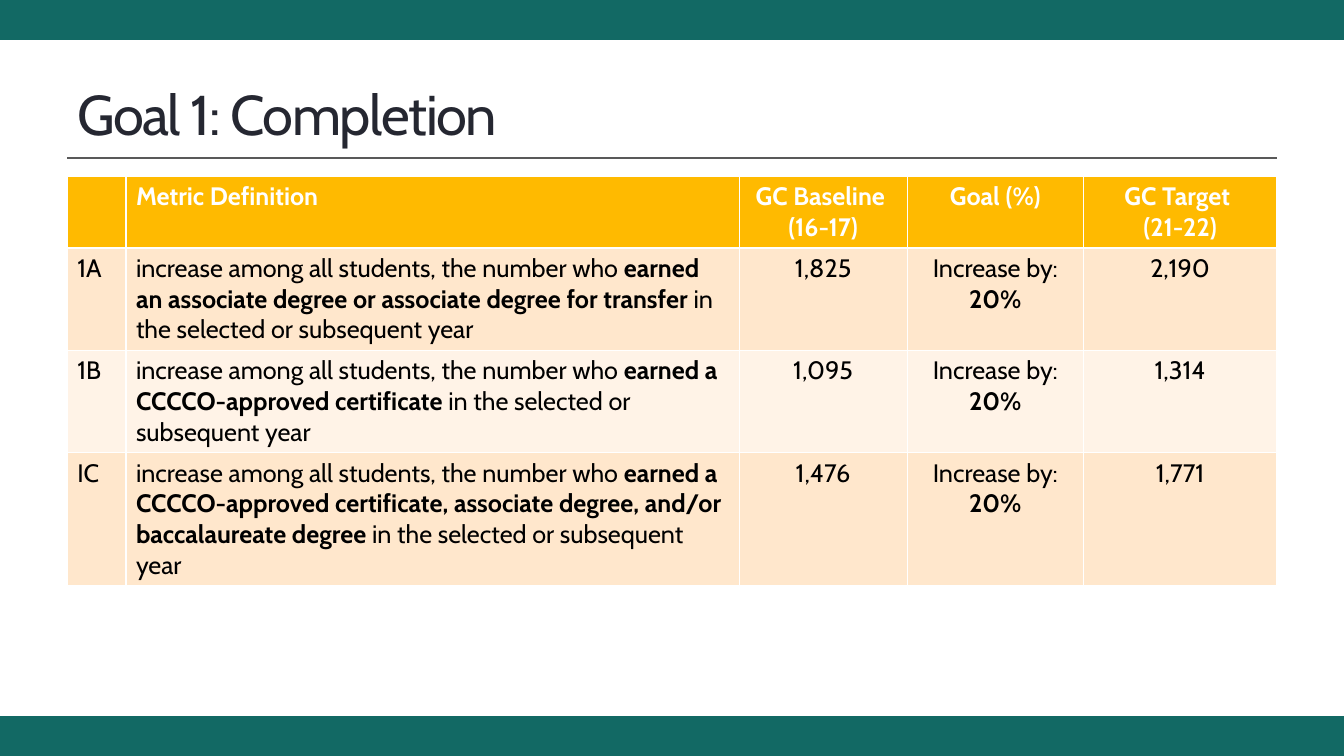
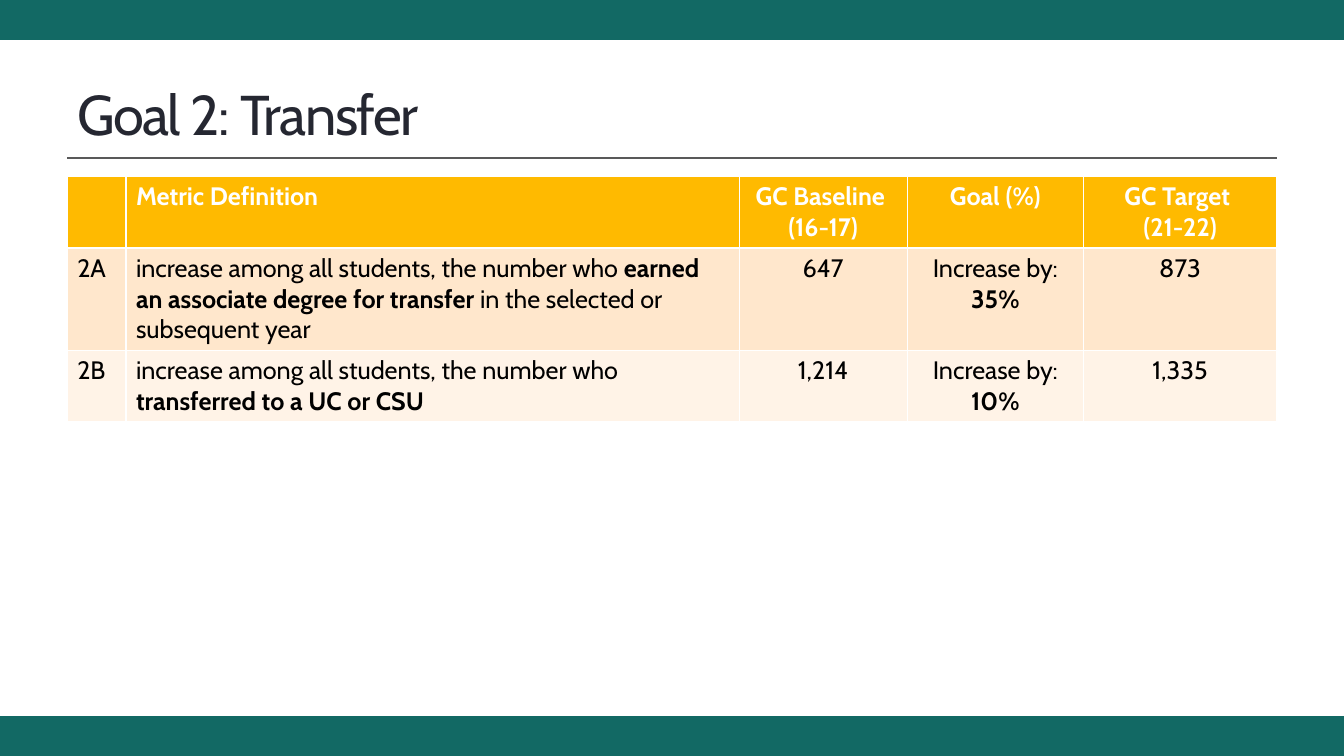
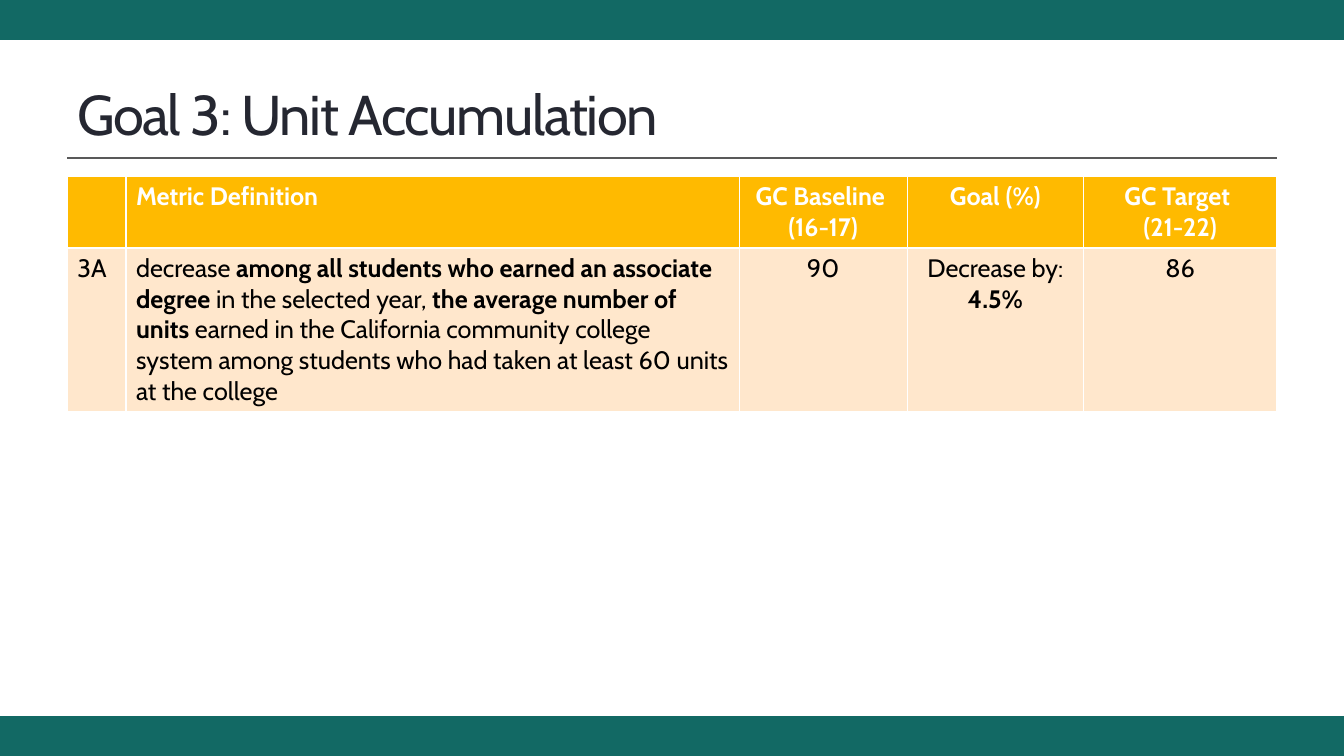
import dataclasses

import pptx
import pptx.dml.color
import pptx.enum.shapes
import pptx.enum.text
import pptx.oxml
import pptx.oxml.ns
import pptx.util

Pt = pptx.util.Pt
CENTER = pptx.enum.text.PP_ALIGN.CENTER
LEFT = pptx.enum.text.PP_ALIGN.LEFT


@dataclasses.dataclass(frozen=True)
class Theme:
    font: str = "Cabin"
    title_size: int = 40
    table_size: int = 18
    band: str = "126964"
    rule: str = "595959"
    title: str = "252731"
    header_fill: str = "FFBA00"
    header_text: str = "FFFFFF"
    body_text: str = "000000"
    row_fills: tuple = ("FFE7CC", "FFF3E7")


@dataclasses.dataclass(frozen=True)
class Box:
    left: float
    top: float
    width: float
    height: float

    def lengths(self):
        return [Pt(value) for value in dataclasses.astuple(self)]


THEME = Theme()
PAGE = Box(0, 0, 960, 540)
BAND_HEIGHT = 28.5
TITLE_BOX = Box(48, 42, 864, 78)
RULE_TOP = 113
TABLE_LEFT, TABLE_TOP = 48, 126
COLUMN_WIDTHS = (42, 438, 120, 126, 138)
COLUMN_ALIGNMENTS = (LEFT, LEFT, CENTER, CENTER, CENTER)
ROW_HEIGHT = 29.5

# Bold passages are set between double asterisks
HEADER = ("", "Metric Definition", "GC Baseline \v(16-17)", "Goal (%)",
          "GC Target \n(21-22)")
AMONG_ALL = "increase among all students, the number who "
IN_YEAR = "in the selected or subsequent year"
GOALS = (
    ("Goal 1: Completion", (
        ("1A", AMONG_ALL + "**earned an associate degree or associate degree "
         "for transfer **" + IN_YEAR,
         "1,825", "Increase by:\n**20%**", "2,190"),
        ("1B", AMONG_ALL + "**earned a CCCCO-approved certificate **" + IN_YEAR,
         "1,095", "Increase by:\n**20%**", "1,314"),
        ("IC", AMONG_ALL + "**earned a CCCCO-approved certificate, associate "
         "degree, and/or baccalaureate degree **" + IN_YEAR,
         "1,476", "Increase by:\n**20%**", "1,771"),
    )),
    ("Goal 2: Transfer", (
        ("2A", AMONG_ALL + "**earned an associate degree for transfer **" + IN_YEAR,
         "647", "Increase by:\n**35%**", "873"),
        ("2B", AMONG_ALL + "**transferred to a UC or CSU**",
         "1,214", "Increase by:\n**10%**", "1,335"),
    )),
    ("Goal 3: Unit Accumulation", (
        ("3A", "decrease **among all students who earned an associate degree** "
         "in the selected year, **the average number of units** earned in the "
         "California community college system among students who had taken at "
         "least 60 units at the college",
         "90", "Decrease by:\n**4.5%**", "86"),
    )),
)


def color(value):
    return pptx.dml.color.RGBColor.from_string(value)


def add_band(slide, box):
    band = slide.shapes.add_shape(
        pptx.enum.shapes.MSO_SHAPE.RECTANGLE, *box.lengths())
    band.shadow.inherit = False
    band.fill.solid()
    band.fill.fore_color.rgb = color(THEME.band)
    band.line.fill.background()
    return band


def add_rule(slide, left, top, width):
    rule = slide.shapes.add_connector(
        pptx.enum.shapes.MSO_CONNECTOR.STRAIGHT,
        Pt(left), Pt(top), Pt(left + width), Pt(top))
    rule.line.color.rgb = color(THEME.rule)
    rule.line.width = Pt(1)
    rule.element.spPr.append(pptx.oxml.parse_xml(
        f"<a:effectLst {pptx.oxml.ns.nsdecls('a')}/>"))
    return rule


def style_layout_title(layout, box):
    """Give the layout's title its place and type, for slides to inherit."""
    title = next(holder for holder in layout.placeholders
                 if holder.placeholder_format.idx == 0)
    title.left, title.top, title.width, title.height = box.lengths()
    title.text_frame.vertical_anchor = pptx.enum.text.MSO_ANCHOR.MIDDLE
    levels = title.element.find(".//" + pptx.oxml.ns.qn("a:lstStyle"))
    levels.append(pptx.oxml.parse_xml(
        f"<a:lvl1pPr {pptx.oxml.ns.nsdecls('a')} algn='l'>"
        f"<a:defRPr sz='{THEME.title_size * 100}' spc='-100'>"
        f"<a:solidFill><a:srgbClr val='{THEME.title}'/></a:solidFill>"
        f"<a:latin typeface='{THEME.font}'/></a:defRPr></a:lvl1pPr>"))


def furnish_layout(layout, slide, page):
    """Draw bands and rule on a slide, then move them behind its layout."""
    bottom = page.top + page.height - BAND_HEIGHT
    furniture = (
        add_band(slide, Box(page.left, page.top, page.width, BAND_HEIGHT)),
        add_band(slide, Box(page.left, bottom, page.width, BAND_HEIGHT)),
        add_rule(slide, TITLE_BOX.left, RULE_TOP, TITLE_BOX.width),
    )
    for order, part in enumerate(furniture):
        part.element.xpath(".//p:cNvPr")[0].set("id", str(20 + order))
        layout.shapes.element.insert(2 + order, part.element)


def write_cell(cell, text, fill, text_color, alignment, bold):
    cell.fill.solid()
    cell.fill.fore_color.rgb = color(fill)
    cell.text_frame.text = text
    for paragraph in cell.text_frame.paragraphs:
        paragraph.alignment = alignment
        paragraph.font.name = THEME.font
        paragraph.font.size = Pt(THEME.table_size)
        paragraph.font.color.rgb = color(text_color)
        paragraph.font.bold = bold
        passages = paragraph.text.split("**")
        if len(passages) > 1:
            paragraph.clear()
            for position, passage in enumerate(passages):
                if passage:
                    run = paragraph.add_run()
                    run.text = passage
                    run.font.bold = position % 2 == 1


def add_metrics(slide, metrics, left, top):
    """Table of metrics; rows grow with their text."""
    rows = (HEADER, *metrics)
    box = Box(left, top, sum(COLUMN_WIDTHS), ROW_HEIGHT * len(rows))
    table = slide.shapes.add_table(
        len(rows), len(COLUMN_WIDTHS), *box.lengths()).table
    table.horz_banding = False
    for column, width in zip(table.columns, COLUMN_WIDTHS):
        column.width = Pt(width)
    for index, (row, texts) in enumerate(zip(table.rows, rows)):
        is_header = index == 0
        fill = (THEME.header_fill if is_header
                else THEME.row_fills[(index - 1) % len(THEME.row_fills)])
        text_color = THEME.header_text if is_header else THEME.body_text
        for cell, text, alignment in zip(row.cells, texts, COLUMN_ALIGNMENTS):
            write_cell(cell, text, fill, text_color, alignment, is_header)


def add_goal_slide(deck, layout, heading, metrics):
    slide = deck.slides.add_slide(layout)
    slide.shapes.title.text = heading
    add_metrics(slide, metrics, TABLE_LEFT, TABLE_TOP)
    return slide


def main():
    deck = pptx.Presentation()
    deck.slide_width, deck.slide_height = Pt(PAGE.width), Pt(PAGE.height)
    layout = deck.slide_layouts.get_by_name("Title Only")
    style_layout_title(layout, TITLE_BOX)
    slides = [add_goal_slide(deck, layout, *goal) for goal in GOALS]
    furnish_layout(layout, slides[0], PAGE)
    deck.save("out.pptx")


if __name__ == "__main__":
    main()
